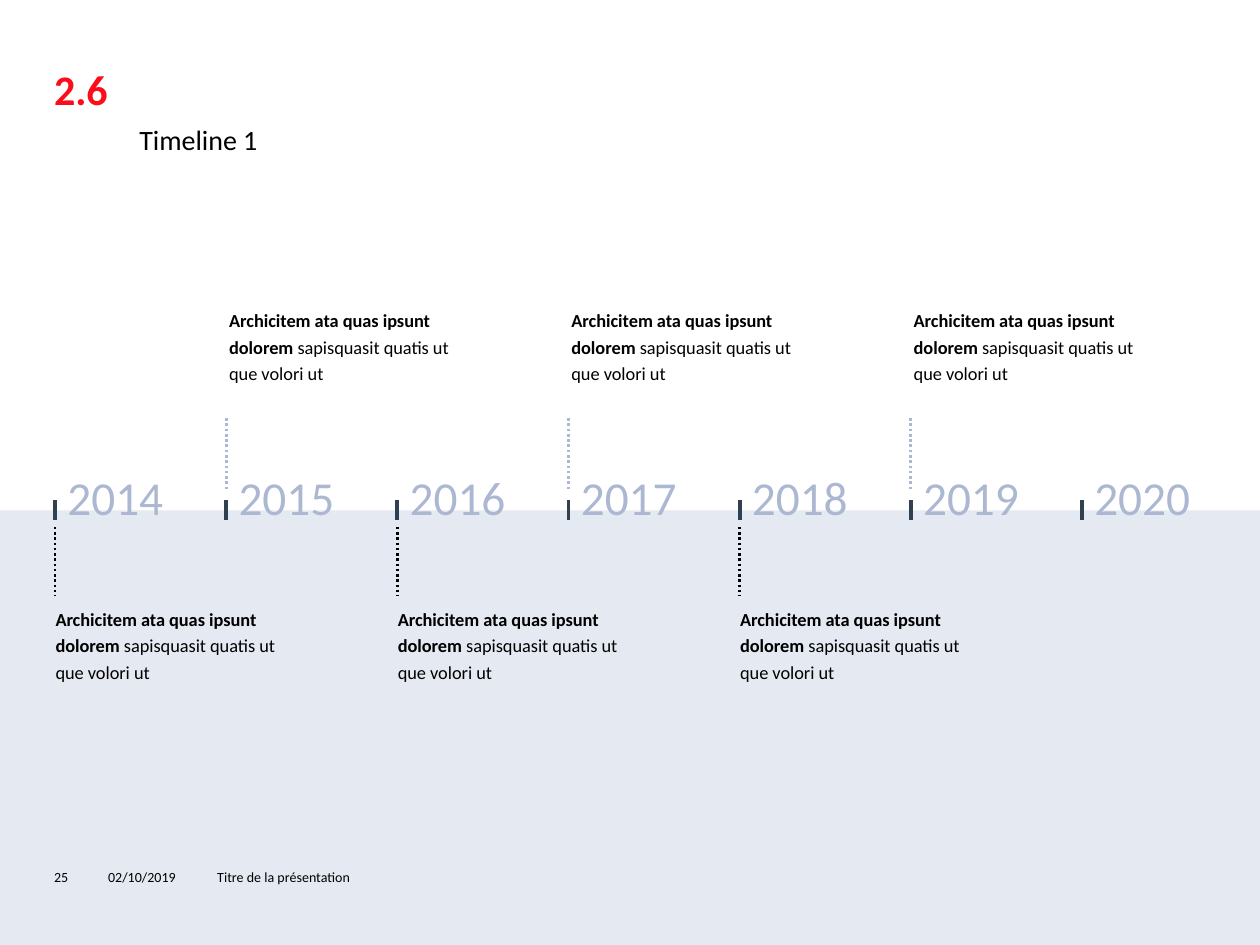
from lxml import etree
from pptx import Presentation
from pptx import util as u
from pptx.dml.color import RGBColor
from pptx.enum import dml, shapes, text
from pptx.oxml.ns import qn

FONT = "Calibri"
BLACK, RED, NAVY, MIST = "000000", "FC0D1A", "314051", "ACB8D2"
FIRST_X, YEAR_STEP = 1.11, 3.45
EVENT = [("Archicitem ata quas ipsunt dolorem ", True),
         ("sapisquasit quatis ut que volori ut", False)]


def color(value):
    return RGBColor.from_string(value)


def place(shape, left, top, width, height):
    shape.left, shape.top = u.Cm(left), u.Cm(top)
    shape.width, shape.height = u.Cm(width), u.Cm(height)


def write(shape, runs, size=10.5, fill=BLACK, anchor=text.MSO_ANCHOR.TOP,
          left=0.25, right=0.25, spacing=1.0):
    frame = shape.text_frame
    frame.word_wrap = True
    frame.auto_size = text.MSO_AUTO_SIZE.NONE
    frame.vertical_anchor = anchor
    frame.margin_left, frame.margin_right = u.Cm(left), u.Cm(right)
    frame.margin_top = frame.margin_bottom = u.Cm(0.13)
    paragraph = frame.paragraphs[0]
    paragraph.alignment = text.PP_ALIGN.LEFT
    paragraph.line_spacing = spacing
    paragraph.space_before = u.Pt(0)
    for wording, bold in runs:
        run = paragraph.add_run()
        run.text = wording
        run.font.name, run.font.size, run.font.bold = FONT, u.Pt(size), bold
        run.font.color.rgb = color(fill)


def add_text(slide, box, runs, **style):
    left, top, width, height = map(u.Cm, box)
    write(slide.shapes.add_textbox(left, top, width, height), runs, **style)


def add_band(slide, box, fill, opacity):
    band = slide.shapes.add_shape(shapes.MSO_SHAPE.RECTANGLE, *map(u.Cm, box))
    band.shadow.inherit = False
    band.fill.solid()
    band.fill.fore_color.rgb = color(fill)
    band.line.fill.background()
    tint = band._element.spPr.find(".//" + qn("a:srgbClr"))
    etree.SubElement(tint, qn("a:alpha"), val=str(opacity * 1000))


def add_vertical(slide, x, top, bottom, stroke, width, dotted=False):
    line = slide.shapes.add_connector(
        shapes.MSO_CONNECTOR.STRAIGHT, u.Cm(x), u.Cm(top), u.Cm(x), u.Cm(bottom))
    line.line.color.rgb = color(stroke)
    line.line.width = u.Pt(width)
    if dotted:
        line.line.dash_style = dml.MSO_LINE.ROUND_DOT
    etree.SubElement(line._element.spPr, qn("a:effectLst"))


def add_heading(slide):
    add_text(slide, (0.84, 1.27, 1.65, 1.04), [("2.6", True)],
             size=24, fill=RED, right=0, spacing=0.9)
    title = slide.shapes.title
    place(title, 2.51, 2.34, 20.52, 0.94)
    write(title, [("Timeline 1", False)], size=16,
          anchor=text.MSO_ANCHOR.MIDDLE, left=0.3)


def add_footer(slide):
    for wording, left, width in [("25", 0.84, 1.09), ("02/10/2019", 1.93, 2.21),
                                 ("Titre de la présentation", 4.13, 20.42)]:
        add_text(slide, (left, 17.17, width, 1.02), [(wording, False)],
                 size=8, anchor=text.MSO_ANCHOR.MIDDLE)


def add_event(slide, x, above):
    if above:
        add_vertical(slide, x, 8.43, 9.86, MIST, 1.5, dotted=True)
        left, top = x - 0.4, 6.02
    else:
        add_vertical(slide, x, 10.62, 12.01, BLACK, 1.5, dotted=True)
        left, top = x - 0.45, 12.04
    add_text(slide, (left, top, 5.31, 2.36), EVENT, left=0.46, spacing=1.2)


def add_timeline(slide, years):
    for index, year in enumerate(years):
        x = FIRST_X + index * YEAR_STEP
        add_vertical(slide, x, 10.08, 10.49, NAVY, 2.25)
        add_text(slide, (x, 9.3, 2.95, 1.42), [(str(year), False)],
                 size=27, fill=MIST)
        if year != years[-1]:
            add_event(slide, x, above=index % 2 == 1)


def main():
    deck = Presentation()
    deck.slide_width, deck.slide_height = u.Cm(25.4), u.Cm(19.05)
    slide = deck.slides.add_slide(deck.slide_layouts[5])
    add_band(slide, (0, 10.29, 25.4, 8.76), MIST, opacity=30)
    add_footer(slide)
    add_heading(slide)
    add_timeline(slide, range(2014, 2021))
    deck.save("out.pptx")


if __name__ == "__main__":
    main()
